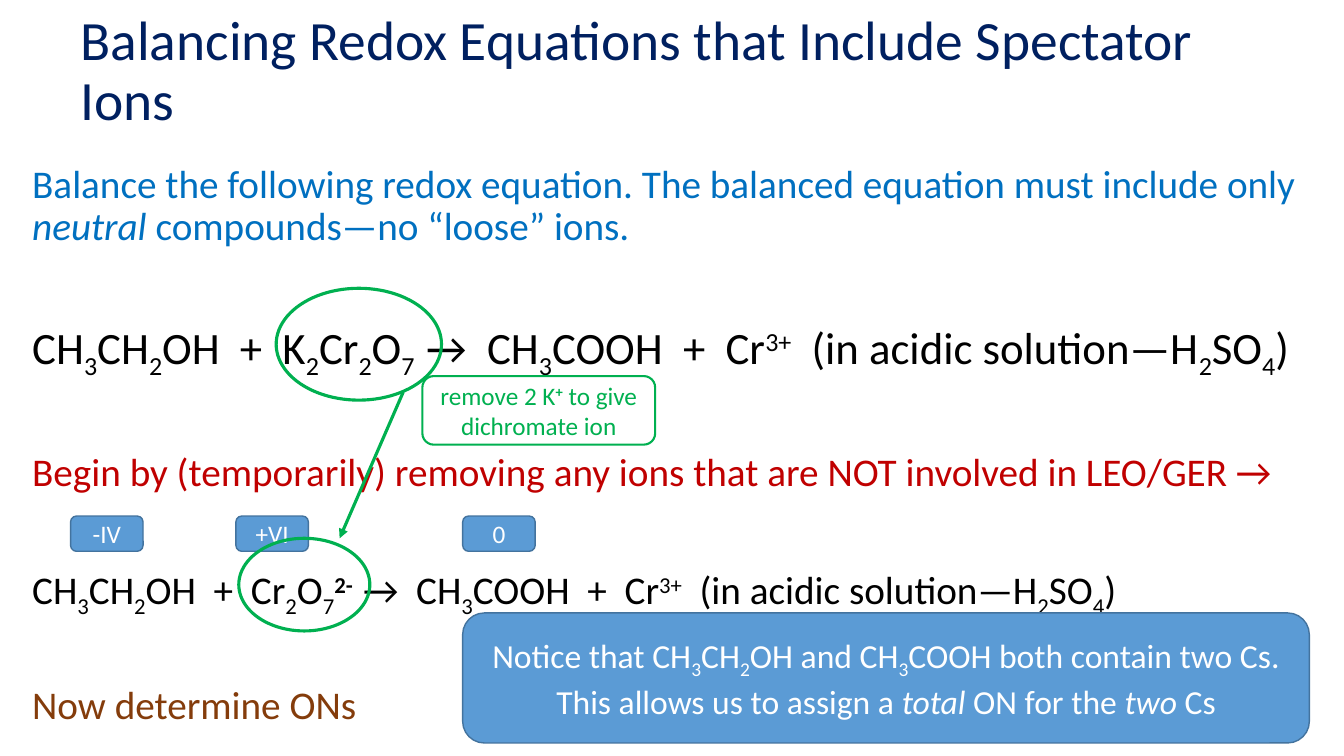
from lxml import etree
from pptx import Presentation
from pptx.dml.color import RGBColor
from pptx.enum import shapes, text
from pptx.oxml import ns
from pptx.util import Pt

FONT = "Calibri"
GREEN, BLUE, BLUE_EDGE, WHITE = "00B050", "5B9BD5", "43739E", "FFFFFF"
STYLE_MARKS = {"_": "sub", "^": "super", "*": "italic", "!": "bold"}
BASELINES = {"sub": "-25000", "super": "30000"}

# Text, colour, size, space before
BODY = [
    ("Balance the following redox equation. The balanced equation must include only "
     "*neutral* compounds—no “loose” ions.", "0070C0", 28, 10),
    ("CH_3_CH_2_OH  +  K_2_Cr_2_O_7  _→  CH_3_COOH  +  Cr^3+^"
     "  (in acidic solution—H_2_SO_4_)", "000000", 32, 51),
    ("Begin by (temporarily) removing any ions that are NOT involved in LEO/GER →",
     "C00000", 28, 55),
    ("CH_3_CH_2_OH  +  Cr_2_O_7_^!2-  !^→  CH_3_COOH  +  Cr^3+^"
     "  (in acidic solution—H_2_SO_4_)", "000000", 28, 51),
    ("Now determine ONs", "843C0B", 28, 51),
]
NOTICE = ["Notice that CH_3_CH_2_OH and CH_3_COOH both contain two Cs.",
          "This allows us to assign a *total* ON for the *two* Cs"]
OXIDATION_NUMBERS = [("-IV", 50.4), ("+VI", 168.5), ("0", 330.5)]


def rgb(color):
    return RGBColor.from_string(color)


def split_marks(marked):
    """Yield (text, styles); each mark switches its style on or off."""
    styles, chunk = set(), ""
    for char in marked:
        if char in STYLE_MARKS:
            if chunk:
                yield chunk, set(styles)
            styles ^= {STYLE_MARKS[char]}
            chunk = ""
        else:
            chunk += char
    if chunk:
        yield chunk, styles


def write(p, marked, color, size):
    for chunk, styles in split_marks(marked):
        r = p.add_run()
        r.text = chunk
        r.font.name, r.font.size = FONT, Pt(size)
        r.font.color.rgb = rgb(color)
        if "italic" in styles:
            r.font.italic = True
        if "bold" in styles:
            r.font.bold = True
        for name in styles & BASELINES.keys():
            r.font._element.set("baseline", BASELINES[name])


def paragraphs(tf, count):
    return [tf.paragraphs[0]] + [tf.add_paragraph() for _ in range(count - 1)]


def place(sp, left, top, width, height):
    sp.left, sp.top, sp.width, sp.height = map(Pt, (left, top, width, height))


def fill_title(sp, title):
    place(sp, 50.4, 5, 884.2, 93.6)
    tf = sp.text_frame
    tf.auto_size = text.MSO_AUTO_SIZE.NONE
    tf.vertical_anchor = text.MSO_ANCHOR.MIDDLE
    p = tf.paragraphs[0]
    p.alignment, p.line_spacing = text.PP_ALIGN.LEFT, 0.9
    write(p, title, "002060", 39.6)


def fill_body(sp, lines):
    place(sp, 15.8, 113.8, 937.4, 426)
    tf = sp.text_frame
    tf.auto_size = text.MSO_AUTO_SIZE.NONE
    for p, (line, color, size, before) in zip(paragraphs(tf, len(lines)), lines):
        p.line_spacing, p.space_before = 0.9, Pt(before)
        pPr = p._p.get_or_add_pPr()
        pPr.set("marL", "0")
        pPr.set("indent", "0")
        etree.SubElement(pPr, ns.qn("a:buNone"))
        write(p, line, color, size)


def add_outline(slide, kind, box, color, weight):
    sp = slide.shapes.add_shape(kind, *map(Pt, box))
    sp.shadow.inherit = False
    sp.fill.background()
    sp.line.color.rgb, sp.line.width = rgb(color), Pt(weight)
    return sp


def add_box(slide, box, lines, size, fill=BLUE, edge=BLUE_EDGE, weight=1, color=WHITE):
    sp = add_outline(slide, shapes.MSO_SHAPE.ROUNDED_RECTANGLE, box, edge, weight)
    sp.fill.solid()
    sp.fill.fore_color.rgb = rgb(fill)
    tf = sp.text_frame
    tf.word_wrap = True
    tf.vertical_anchor = text.MSO_ANCHOR.MIDDLE
    for p, line in zip(paragraphs(tf, len(lines)), lines):
        p.alignment = text.PP_ALIGN.CENTER
        write(p, line, color, size)


def add_arrow(slide, ends, color, weight):
    line = slide.shapes.add_connector(shapes.MSO_CONNECTOR.STRAIGHT, *map(Pt, ends))
    line.line.color.rgb, line.line.width = rgb(color), Pt(weight)
    etree.SubElement(line.line._get_or_add_ln(), ns.qn("a:tailEnd"), type="triangle")
    etree.SubElement(line._element.spPr, ns.qn("a:effectLst"))


def main():
    prs = Presentation()
    prs.slide_width, prs.slide_height = Pt(960), Pt(540)
    slide = prs.slides.add_slide(prs.slide_layouts[1])
    fill_title(slide.shapes.title, "Balancing Redox Equations that Include Spectator Ions")
    fill_body(slide.placeholders[1], BODY)

    add_box(slide, (330.5, 437.8, 604.8, 92.9), NOTICE, 24)
    for number, left in OXIDATION_NUMBERS:
        add_box(slide, (left, 368.6, 51.8, 25.2), [number], 18)

    for ring in [(197.3, 205.9, 118.1, 79.9), (170.6, 384.5, 93.6, 66.2)]:
        add_outline(slide, shapes.MSO_SHAPE.OVAL, ring, GREEN, 2.25)
    add_arrow(slide, (288, 280.1, 242.6, 384.5), GREEN, 2.25)
    add_box(slide, (301.7, 268.6, 166.3, 49), ["remove 2 K^!+!^ to give dichromate ion"],
            18, WHITE, GREEN, 1.5, GREEN)
    prs.save("out.pptx")


if __name__ == "__main__":
    main()
